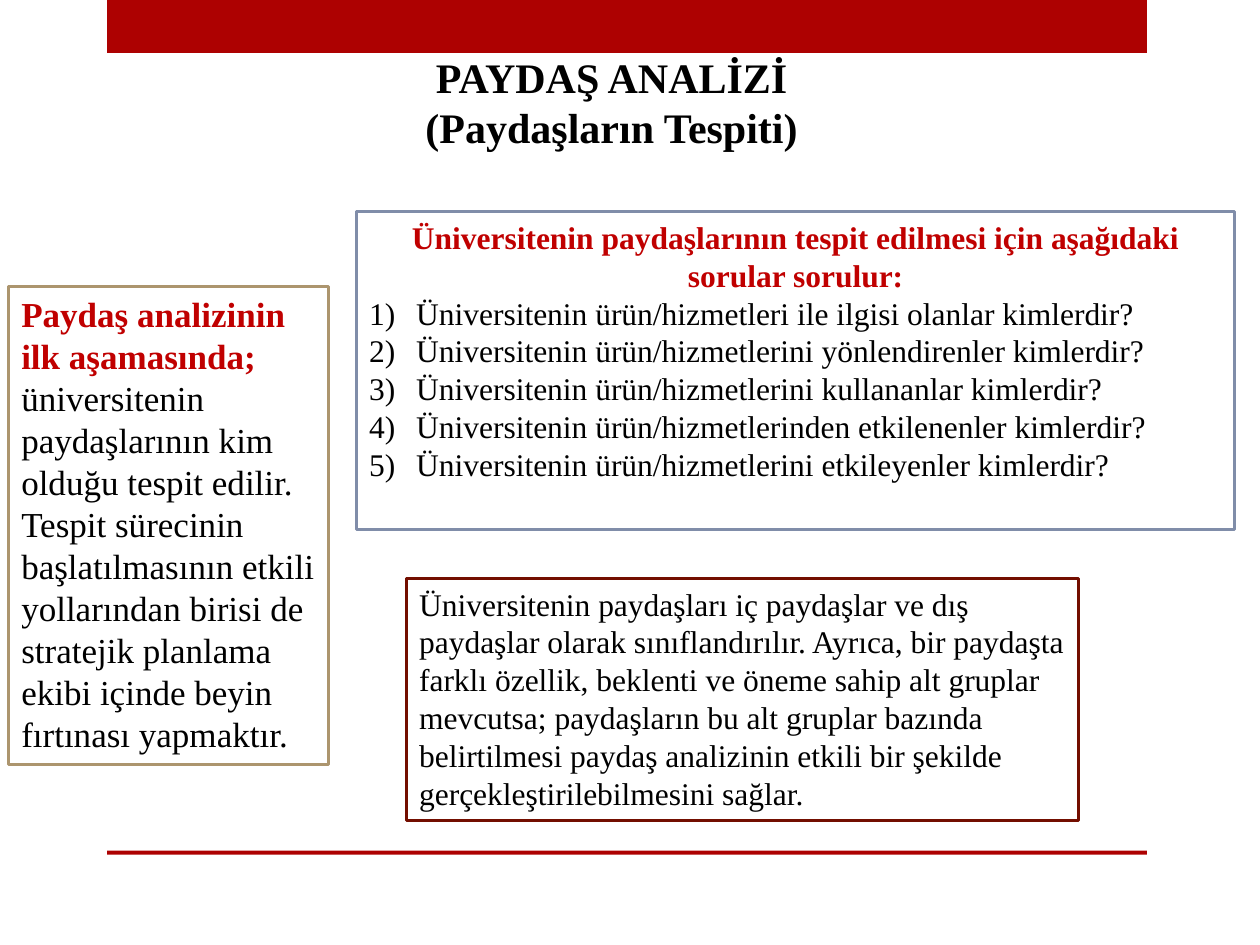
from dataclasses import dataclass

from lxml import etree
from pptx import Presentation
from pptx.dml.color import RGBColor
from pptx.enum.shapes import MSO_SHAPE
from pptx.enum.text import MSO_ANCHOR, PP_ALIGN
from pptx.oxml.ns import qn
from pptx.util import Cm, Pt

RECT = MSO_SHAPE.RECTANGLE
TOP = MSO_ANCHOR.TOP
LEFT, CENTER = PP_ALIGN.LEFT, PP_ALIGN.CENTER


@dataclass(frozen=True)
class Theme:
    font: str = "Times New Roman"
    black: str = "000000"
    white: str = "FFFFFF"
    band: str = "AD0101"
    accent: str = "C00000"
    blue: str = "808DA9"
    sand: str = "AC956E"
    maroon: str = "730E00"
    title: int = 24
    lead: int = 20
    body: int = 18
    border: float = 1.75
    indent: float = 0.95


THEME = Theme()


def write(p, text, size=THEME.body, color=THEME.black, bold=False, align=LEFT):
    p.alignment = align
    r = p.add_run()
    r.text = text
    r.font.name = THEME.font
    r.font.size = Pt(size)
    r.font.bold = bold
    r.font.color.rgb = RGBColor.from_string(color)


class Deck:
    """Builds a slide of bars, a title and bordered text boxes."""

    def __init__(self, theme):
        self.theme = theme
        self.prs = Presentation()
        self.prs.slide_width, self.prs.slide_height = Cm(25.4), Cm(19.05)
        self.s = self.prs.slides.add_slide(self.prs.slide_layouts[6])

    def rect(self, box, fill):
        sp = self.s.shapes.add_shape(RECT, *map(Cm, box))
        sp.shadow.inherit = False
        sp.fill.solid()
        sp.fill.fore_color.rgb = RGBColor.from_string(fill)
        sp.line.fill.background()
        return sp

    def title(self, box, lines):
        tf = self.s.shapes.add_textbox(*map(Cm, box)).text_frame
        tf.word_wrap = True
        for i, line in enumerate(lines):
            p = tf.add_paragraph() if i else tf.paragraphs[0]
            write(p, line, size=self.theme.title, bold=True, align=CENTER)

    def panel(self, box, border):
        sp = self.rect(box, self.theme.white)
        sp.line.color.rgb = RGBColor.from_string(border)
        sp.line.width = Pt(self.theme.border)
        tf = sp.text_frame
        tf.word_wrap = True
        tf.vertical_anchor = TOP
        return tf

    def numbered(self, tf, items):
        indent = Cm(self.theme.indent)
        for item in items:
            p = tf.add_paragraph()
            pPr = p._p.get_or_add_pPr()
            pPr.set("marL", str(indent))
            pPr.set("indent", str(-indent))
            etree.SubElement(pPr, qn("a:buFont"), typeface="+mj-lt")
            etree.SubElement(pPr, qn("a:buAutoNum"), type="arabicParenR")
            write(p, item)


def main():
    t = THEME
    deck = Deck(t)
    for top, height in ((0, 1.07), (17.15, 0.08)):
        deck.rect((2.16, top, 20.96, height), t.band)
    deck.title((2.13, 0.91, 20.4, 3.33),
               ("PAYDAŞ ANALİZİ", "(Paydaşların Tespiti)"))

    questions = deck.panel((7.19, 4.27, 17.7, 6.4), t.blue)
    write(questions.paragraphs[0],
          "Üniversitenin paydaşlarının tespit edilmesi için aşağıdaki "
          "sorular sorulur:", color=t.accent, bold=True, align=CENTER)
    deck.numbered(questions, (
        "Üniversitenin ürün/hizmetleri ile ilgisi olanlar kimlerdir?",
        "Üniversitenin ürün/hizmetlerini yönlendirenler kimlerdir?",
        "Üniversitenin ürün/hizmetlerini kullananlar kimlerdir?",
        "Üniversitenin ürün/hizmetlerinden etkilenenler kimlerdir?",
        "Üniversitenin ürün/hizmetlerini etkileyenler kimlerdir?",
    ))

    p = deck.panel((0.18, 5.77, 6.45, 9.65), t.sand).paragraphs[0]
    write(p, "Paydaş analizinin ilk aşamasında; ",
          size=t.lead, color=t.accent, bold=True)
    write(p, "üniversitenin paydaşlarının kim olduğu tespit edilir. Tespit "
          "sürecinin başlatılmasının etkili yollarından birisi de stratejik "
          "planlama ekibi içinde beyin fırtınası yapmaktır.", size=t.lead)

    p = deck.panel((8.2, 11.66, 13.54, 4.88), t.maroon).paragraphs[0]
    write(p, "Üniversitenin paydaşları iç paydaşlar ve dış paydaşlar olarak "
          "sınıflandırılır. Ayrıca, bir paydaşta farklı özellik, beklenti ve "
          "öneme sahip alt gruplar mevcutsa; paydaşların bu alt gruplar "
          "bazında belirtilmesi paydaş analizinin etkili bir şekilde "
          "gerçekleştirilebilmesini sağlar.")
    deck.prs.save("out.pptx")


if __name__ == "__main__":
    main()
